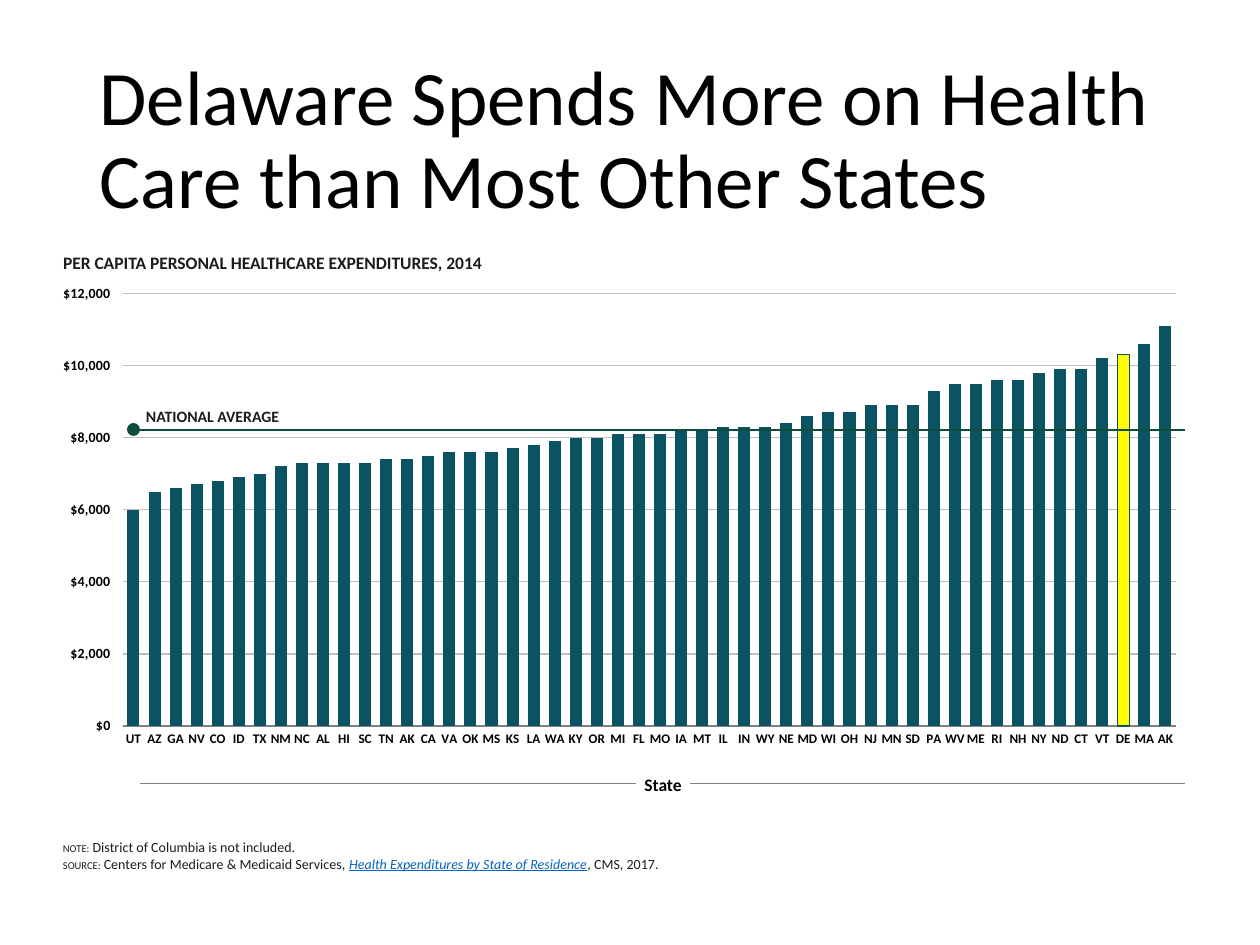
from lxml import etree
from pptx import Presentation
from pptx.chart.data import CategoryChartData
from pptx.dml.color import RGBColor
from pptx.enum.chart import XL_CHART_TYPE, XL_TICK_MARK
from pptx.enum.shapes import MSO_CONNECTOR, MSO_SHAPE
from pptx.enum.text import MSO_ANCHOR, MSO_AUTO_SIZE, PP_ALIGN
from pptx.oxml.ns import qn
from pptx.util import Emu, Pt

STACKED = XL_CHART_TYPE.COLUMN_STACKED
TICK_NONE, TICK_OUT = XL_TICK_MARK.NONE, XL_TICK_MARK.OUTSIDE
STRAIGHT = MSO_CONNECTOR.STRAIGHT
RECT, OVAL = MSO_SHAPE.RECTANGLE, MSO_SHAPE.OVAL
TOP, MIDDLE, BOTTOM = MSO_ANCHOR.TOP, MSO_ANCHOR.MIDDLE, MSO_ANCHOR.BOTTOM
LEFT, CENTER = PP_ALIGN.LEFT, PP_ALIGN.CENTER
NO_FIT = MSO_AUTO_SIZE.NONE
AUTO_ROTATION = "-60000000"

BLACK = RGBColor(0x00, 0x00, 0x00)
WHITE = RGBColor(0xFF, 0xFF, 0xFF)
INK = RGBColor(0x1C, 0x1C, 0x1C)
GRAY = RGBColor(0x80, 0x80, 0x80)
GRID = RGBColor(0xBF, 0xBF, 0xBF)
TEAL = RGBColor(0x0B, 0x53, 0x62)
GREEN = RGBColor(0x0E, 0x4D, 0x3C)
YELLOW = RGBColor(0xFF, 0xFF, 0x00)
LINK = RGBColor(0x05, 0x63, 0xC1)

STATES = (
    "UT AZ GA NV CO ID TX NM NC AL HI SC TN AK CA VA OK MS KS LA WA KY OR MI FL "
    "MO IA MT IL IN WY NE MD WI OH NJ MN SD PA WV ME RI NH NY ND CT VT DE MA AK"
).split()
SPENDING = [
    6000, 6500, 6600, 6700, 6800, 6900, 7000, 7200, 7300, 7300,
    7300, 7300, 7400, 7400, 7500, 7600, 7600, 7600, 7700, 7800,
    7900, 8000, 8000, 8100, 8100, 8100, 8200, 8200, 8300, 8300,
    8300, 8400, 8600, 8700, 8700, 8900, 8900, 8900, 9300, 9500,
    9500, 9600, 9600, 9800, 9900, 9900, 10200, 10300, 10600, 11100,
]
NOTES = [
    [("NOTE:", 6, INK), (" District of Columbia is not included.", 8, INK)],
    [
        ("SOURCE", 6, INK),
        (":", 6, BLACK),
        (" ", 8, BLACK),
        ("Centers for Medicare & Medicaid Services, ", 8, INK),
        ("Health Expenditures by State of Residence", 8, LINK),
        (", CMS, 2017.", 8, INK),
    ],
]


def px(*lengths):
    """Turn lengths in px into EMU."""
    return [Emu(n * 914400 // 126) for n in lengths]


class SlideBuilder:
    """Holds the style and the current slide."""

    font = "Calibri"

    def __init__(self, slide):
        self.slide = slide
        self.shapes = slide.shapes

    def style(self, font, size, color, bold=False):
        font.name, font.size, font.bold = self.font, Pt(size), bold
        font.color.rgb = color

    def title(self, text, box):
        sp = self.shapes.title
        sp.left, sp.top, sp.width, sp.height = px(*box)
        tf = sp.text_frame
        tf.text, tf.vertical_anchor, tf.auto_size = text, MIDDLE, NO_FIT
        p = tf.paragraphs[0]
        p.alignment, p.line_spacing = LEFT, 0.9
        self.style(p.font, 44, BLACK)

    def label(self, text, box, size, color=INK, anchor=TOP, inset=0, align=LEFT, fill=None):
        if fill is None:
            sp = self.shapes.add_textbox(*px(*box))
        else:
            sp = self.shape(RECT, box, fill)
        tf = sp.text_frame
        tf.margin_left, tf.margin_right = px(inset, inset)
        tf.word_wrap, tf.vertical_anchor = False, anchor
        p = tf.paragraphs[0]
        p.text, p.alignment = text, align
        self.style(p.font, size, color, True)

    def notes(self, paragraphs, box):
        tf = self.shapes.add_textbox(*px(*box)).text_frame
        tf.margin_left = tf.margin_right = 0
        tf.word_wrap, tf.vertical_anchor = True, BOTTOM
        for i, runs in enumerate(paragraphs):
            p = tf.add_paragraph() if i else tf.paragraphs[0]
            p.space_before = Pt(0 if i else 2)
            for text, size, color in runs:
                r = p.add_run()
                r.text = text
                self.style(r.font, size, color)
                if color == LINK:
                    r.font.italic = r.font.underline = True

    def shape(self, kind, box, fill):
        sp = self.shapes.add_shape(kind, *px(*box))
        sp.shadow.inherit = False
        sp.fill.solid()
        sp.fill.fore_color.rgb = fill
        sp.line.fill.background()
        return sp

    def line(self, ends, color, width):
        cxn = self.shapes.add_connector(STRAIGHT, *px(*ends))
        cxn.line.color.rgb, cxn.line.width = color, Pt(width)
        etree.SubElement(cxn._element.spPr, qn("a:effectLst"))

    def chart(self, cats, vals, highlight, box, plot_area):
        data = CategoryChartData()
        data.categories = cats
        data.add_series("Series 1", vals)
        chart = self.shapes.add_chart(STACKED, *px(*box), data).chart
        chart.has_legend = chart.has_title = False
        self.style(chart.font, 18, BLACK)
        plot = chart.plots[0]
        plot.gap_width, plot.overlap, plot.vary_by_categories = 75, 100, False
        series = plot.series[0]
        series.format.fill.solid()
        series.format.fill.fore_color.rgb = TEAL
        point = series.points[cats.index(highlight)].format
        point.fill.solid()
        point.fill.fore_color.rgb = YELLOW
        point.line.color.rgb, point.line.width = TEAL, Pt(0.75)

        cat = chart.category_axis
        cat.major_tick_mark = TICK_NONE
        cat.format.line.color.rgb = GRAY
        self.style(cat.tick_labels.font, 7.5, BLACK, True)
        body = cat._element.find(qn("c:txPr")).find(qn("a:bodyPr"))
        body.set("rot", AUTO_ROTATION)
        skip = etree.Element(qn("c:tickLblSkip"), val="1")
        cat._element.find(qn("c:noMultiLvlLbl")).addprevious(skip)

        val = chart.value_axis
        val.minimum_scale, val.maximum_scale, val.major_unit = 0, 12000, 2000
        val.major_tick_mark = TICK_OUT
        val.format.line.fill.background()
        grid = val.major_gridlines.format.line
        grid.color.rgb, grid.width = GRID, Pt(0.75)
        labels = val.tick_labels
        labels.number_format, labels.number_format_is_linked = '"$"#,##0', False
        self.style(labels.font, 8, BLACK, True)
        self.place_plot(chart, plot_area)

    def place_plot(self, chart, plot_area):
        area = chart._chartSpace.chart.plotArea
        for old in area.findall(qn("c:layout")):
            area.remove(old)
        layout = etree.Element(qn("c:layout"))
        manual = etree.SubElement(layout, qn("c:manualLayout"))
        settings = [("layoutTarget", "inner"), ("xMode", "edge"), ("yMode", "edge")]
        for tag, value in settings + list(zip("xywh", plot_area)):
            etree.SubElement(manual, qn(f"c:{tag}"), val=str(value))
        area.insert(0, layout)


def main():
    prs = Presentation()
    prs.slide_width, prs.slide_height = px(1260, 945)
    s = SlideBuilder(prs.slides.add_slide(prs.slide_layouts[5]))
    s.title("Delaware Spends More on Health Care than Most Other States", (87, 51, 1086, 183))
    s.label("PER CAPITA PERSONAL HEALTHCARE EXPENDITURES, 2014", (63, 246, 432, 34), 10)
    s.notes(NOTES, (63, 831, 1133, 47))
    plot_area = (58 / 1134, 8 / 506, 1055 / 1134, 433 / 506)
    s.chart(STATES, SPENDING, "DE", (63, 285, 1134, 506), plot_area)
    s.line((140, 783, 1185, 783), GRAY, 0.5)
    s.label("State", (636, 767, 54, 34), 10, BLACK, MIDDLE, align=CENTER, fill=WHITE)
    s.label("NATIONAL AVERAGE", (133, 400, 163, 32), 9, anchor=BOTTOM, inset=13)
    s.line((1185, 430, 129, 430), GREEN, 1.5)
    s.shape(OVAL, (127, 423, 13, 13), GREEN)
    prs.save("out.pptx")


if __name__ == "__main__":
    main()
